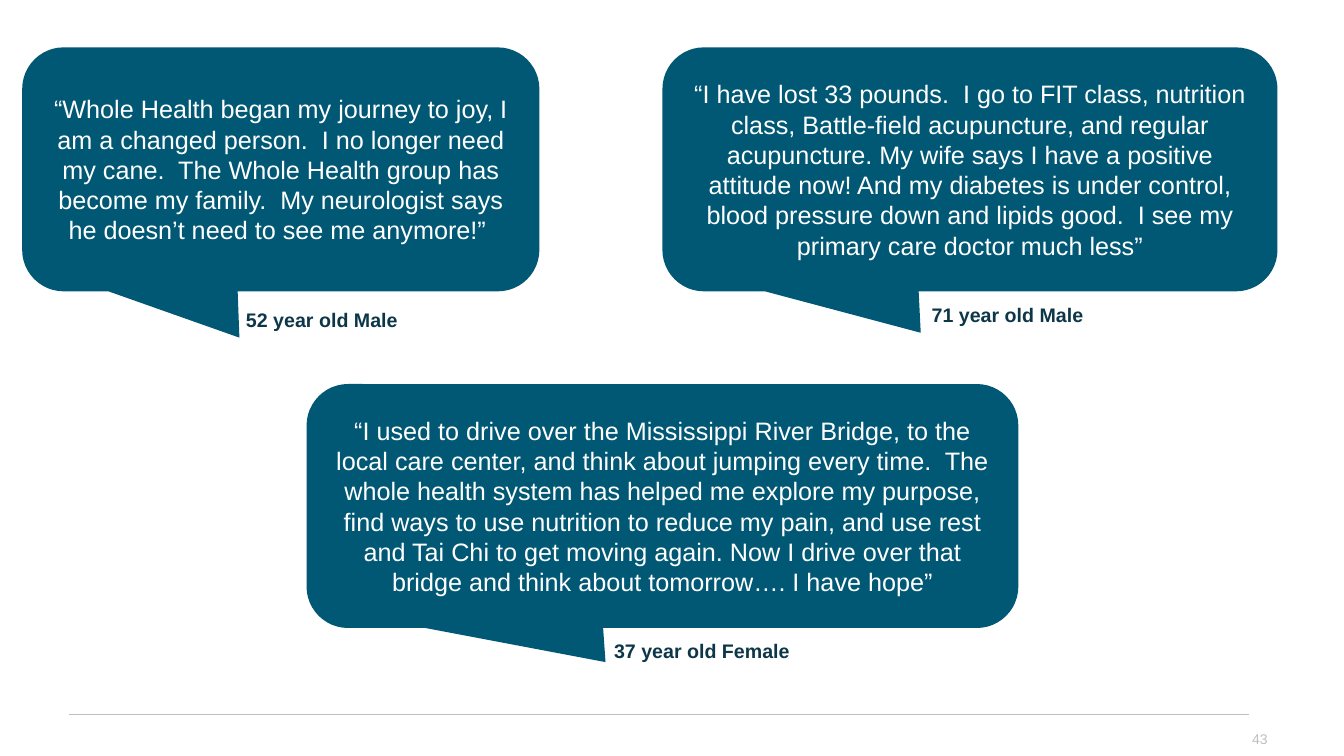
from lxml import etree
from pptx import Presentation
from pptx import util as u
from pptx.dml.color import RGBColor
from pptx.enum import shapes, text
from pptx.oxml.ns import qn

WIDTH, HEIGHT = u.Inches(13.33), u.Inches(7.5)
COLORS = {"bubble": "015874", "quote": "FFFFFF", "speaker": "0D3748", "footer": "BFBFBF"}
FONT = "Arial"
BUBBLE_HEIGHT, SPEAKER_HEIGHT = 32.27, 8.13
TOP_ROW, BOTTOM_ROW = 6.27, 50.8

# Quote, bubble (left, top, width), tail depth, speaker, label (left, top, width)
TESTIMONIALS = [
    ("“Whole Health began my journey to joy, I am a changed person.  I no longer "
     "need my cane.  The Whole Health group has become my family.  My neurologist "
     "says he doesn’t need to see me anymore!” ",
     (1.65, TOP_ROW, 38.48), 0.69, "52 year old Male", (17.33, 36.67, 20.26)),
    ("“I have lost 33 pounds.  I go to FIT class, nutrition class, Battle-field "
     "acupuncture, and regular acupuncture. My wife says I have a positive attitude "
     "now! And my diabetes is under control, blood pressure down and lipids good.  "
     "I see my primary care doctor much less”",
     (49.29, TOP_ROW, 45.76), 0.67, "71 year old Male", (68.34, 36, 23.33)),
    ("“I used to drive over the Mississippi River Bridge, to the local care center, "
     "and think about jumping every time.  The whole health system has helped me "
     "explore my purpose, find ways to use nutrition to reduce my pain, and use "
     "rest and Tai Chi to get moving again. Now I drive over that bridge and think "
     "about tomorrow…. I have hope”",
     (22.81, BOTTOM_ROW, 52.96), 0.64, "37 year old Female", (44.71, 80.4, 23.33)),
]


def across(percent):
    return int(WIDTH * percent / 100)


def down(percent):
    return int(HEIGHT * percent / 100)


def area(left, top, width, height):
    """Turn percentages of the slide into lengths."""
    return across(left), down(top), across(width), down(height)


def color(name):
    return RGBColor.from_string(COLORS[name])


def write(shape, words, size, color_name, align, anchor, inset=(0.13, 0.07), bold=False):
    frame = shape.text_frame
    frame.word_wrap = True
    frame.vertical_anchor = anchor
    frame.margin_left = frame.margin_right = u.Inches(inset[0])
    frame.margin_top = frame.margin_bottom = u.Inches(inset[1])
    paragraph = frame.paragraphs[0]
    paragraph.text = words
    paragraph.alignment = align
    paragraph.font.name = FONT
    paragraph.font.size = u.Pt(size)
    paragraph.font.bold = bold
    paragraph.font.color.rgb = color(color_name)


def add_bubble(slide, quote, place, tail_depth):
    bubble = slide.shapes.add_shape(
        shapes.MSO_SHAPE.ROUNDED_RECTANGULAR_CALLOUT, *area(*place, BUBBLE_HEIGHT))
    bubble.adjustments[0] = -0.08
    bubble.adjustments[1] = tail_depth
    bubble.adjustments[2] = 0.17
    bubble.shadow.inherit = False
    bubble.fill.solid()
    bubble.fill.fore_color.rgb = color("bubble")
    bubble.line.fill.background()
    write(bubble, quote, 18, "quote", text.PP_ALIGN.CENTER, text.MSO_ANCHOR.MIDDLE)


def add_speaker(slide, speaker, place):
    label = slide.shapes.add_textbox(*area(*place, SPEAKER_HEIGHT))
    write(label, speaker, 14, "speaker", text.PP_ALIGN.LEFT, text.MSO_ANCHOR.BOTTOM, bold=True)


def add_footer(slide, number):
    rule = slide.shapes.add_connector(
        shapes.MSO_CONNECTOR.STRAIGHT,
        across(5.1), down(94.53), across(92.95), down(94.53))
    rule.line.color.rgb = color("footer")
    rule.line.width = u.Pt(0.5)
    etree.SubElement(rule._element.spPr, qn("a:effectLst"))
    page = slide.shapes.add_textbox(*area(71.72, 95.6, 23.33, 4.4))
    write(page, number, 10, "footer", text.PP_ALIGN.RIGHT, text.MSO_ANCHOR.MIDDLE,
          inset=(0.1, 0.05))


def main():
    deck = Presentation()
    deck.slide_width, deck.slide_height = WIDTH, HEIGHT
    slide = deck.slides.add_slide(deck.slide_layouts[6])
    for quote, bubble_place, tail_depth, speaker, speaker_place in TESTIMONIALS:
        add_bubble(slide, quote, bubble_place, tail_depth)
        add_speaker(slide, speaker, speaker_place)
    add_footer(slide, "43")
    deck.save("out.pptx")


if __name__ == "__main__":
    main()
